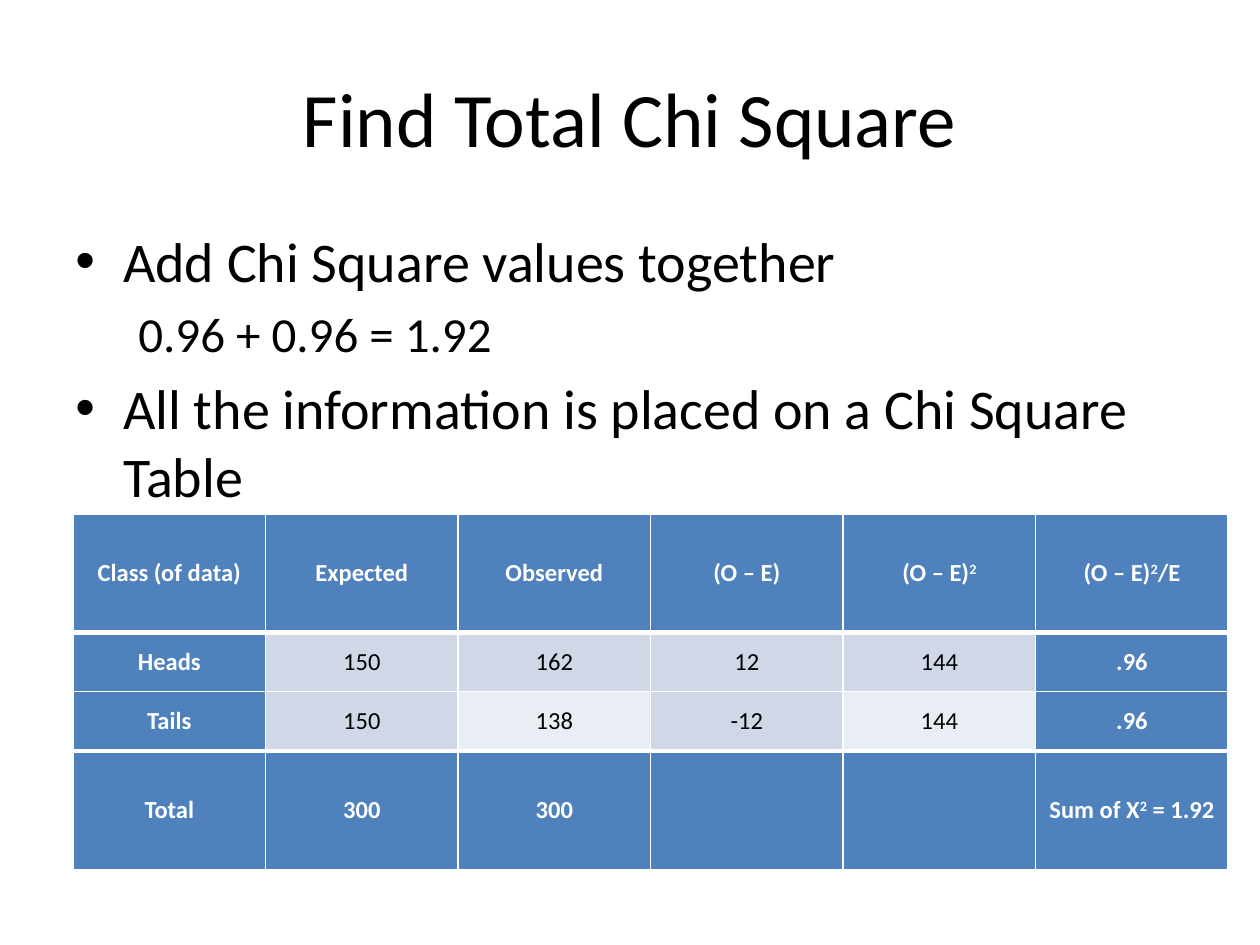
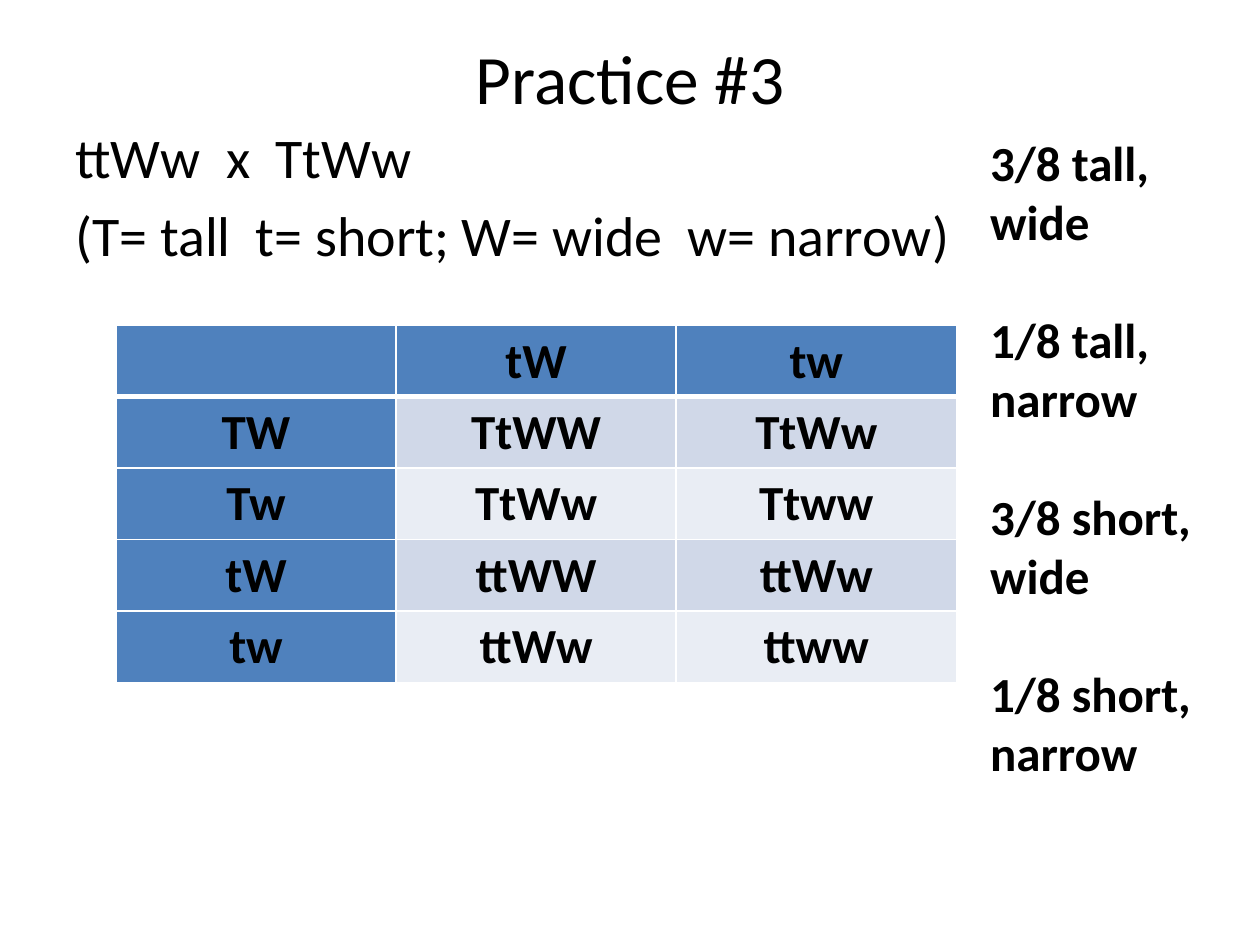
from pptx import Presentation
from pptx.dml.color import RGBColor
from pptx.enum.text import MSO_ANCHOR, PP_ALIGN
from pptx.util import Inches, Pt
from lxml.etree import SubElement
from pptx.oxml.ns import qn

HUES = {"ink": "000000", "paper": "FFFFFF", "head": "4F81BD",
        "dark": "D0D8E8", "light": "E9EDF4"}
FACE = "Calibri"

CHI = [["Class (of data)", "Expected", "Observed", "(O – E)", "(O – E)^2", "(O – E)^2/E"],
       ["Heads", "150", "162", "12", "144", ".96"],
       ["Tails", "150", "138", "-12", "144", ".96"],
       ["Total", "300", "300", "", "", "Sum of X^2 = 1.92"]]
CROSS = [["", "tW", "tw"],
         ["TW", "TtWW", "TtWw"],
         ["Tw", "TtWw", "Ttww"],
         ["tW", "ttWW", "ttWw"],
         ["tw", "ttWw", "ttww"]]
RATIOS = ["3/8 tall, wide", "1/8 tall, narrow", "3/8 short, wide", "1/8 short, narrow"]


def style(para, size, hue="ink", bold=False):
    for run in para.runs:
        font = run.font
        font.name, font.size, font.bold = FACE, Pt(size), bold
        font.color.rgb = RGBColor.from_string(HUES[hue])


def title(deck, text, box, size):
    """Add a title-only slide and set its title."""
    slide = deck.slides.add_slide(deck.slide_layouts[5])
    head = slide.shapes.title
    head.left, head.top, head.width, head.height = map(Inches, box)
    frame = head.text_frame
    frame.text = text
    frame.vertical_anchor = MSO_ANCHOR.MIDDLE
    frame.paragraphs[0].alignment = PP_ALIGN.CENTER
    style(frame.paragraphs[0], size)
    return slide


def indent(para, left, bullet):
    props = para._p.get_or_add_pPr()
    props.set("marL", str(Inches(left)))
    if bullet:
        props.set("indent", str(-Inches(left)))
        SubElement(props, qn("a:buFont"), typeface="Arial")
        SubElement(props, qn("a:buChar"), char="•")


def body(slide, box, items, bold=False, before=0.2, after=0):
    """Write items of (text, size, indent, bullet) as paragraphs."""
    frame = slide.shapes.add_textbox(*map(Inches, box)).text_frame
    frame.word_wrap = True
    frame.text = "\n".join(item[0] for item in items)
    for para, (_, size, left, bullet) in zip(frame.paragraphs, items):
        para.space_before = Pt(size * before)
        para.space_after = Pt(after)
        indent(para, left, bullet)
        style(para, size, bold=bold)


def edge(cell, side, width):
    line = SubElement(cell._tc.get_or_add_tcPr(), qn("a:ln" + side), w=str(Pt(width)))
    fill = SubElement(line, qn("a:solidFill"))
    SubElement(fill, qn("a:srgbClr"), val=HUES["paper"])


def write(cell, text, size, hue, bold):
    """Centre text in a cell; ^2 stands for a raised 2."""
    para = cell.text_frame.paragraphs[0]
    para.alignment = PP_ALIGN.CENTER
    for n, part in enumerate(text.split("^2")):
        if n:
            power = para.add_run()
            power.text = "2"
            power._r.get_or_add_rPr().set("baseline", "30000")
        if part:
            para.add_run().text = part
    style(para, size, hue, bold)


def grid(slide, box, rows, heights, size, heads, heavy, strips=False, tight=False):
    """Draw a banded table; heads(r, c) tells header cells, heavy the thick rules."""
    table = slide.shapes.add_table(len(rows), len(rows[0]), *map(Inches, box)).table
    for col in table.columns:
        col.width = Inches(box[2] / len(rows[0]))
    for r, (row, high) in enumerate(zip(rows, heights)):
        table.rows[r].height = Inches(high)
        for c, text in enumerate(row):
            cell = table.cell(r, c)
            top, low = (3 if n in heavy else 1 for n in (r, r + 1))
            for side, width in zip("LRTB", (1, 1, top, low)):
                edge(cell, side, width)
            main = heads(r, c)
            band = "dark" if r % 2 or strips and c % 2 else "light"
            cell.fill.solid()
            cell.fill.fore_color.rgb = RGBColor.from_string(HUES["head" if main else band])
            if tight:
                cell.margin_left = cell.margin_right = Inches(0.07)
                cell.margin_top = cell.margin_bottom = 0
                cell.vertical_anchor = MSO_ANCHOR.MIDDLE
            # the tight table sets white on its header cells only
            white = tight and main
            write(cell, text, size, "paper" if white else "ink", white or not tight)


def total(deck):
    slide = title(deck, "Find Total Chi Square", (0.5, 0.3, 9, 1.25), 44)
    body(slide, (0.5, 1.75, 9, 4.95), [
        ("Add Chi Square values together", 32, 0.38, True),
        ("0.96 + 0.96 = 1.92", 28, 0.5, False),
        ("All the information is placed on a Chi Square Table", 32, 0.38, True)])
    grid(slide, (0.58, 4.08, 9.17, 2.83), CHI, (0.94, 0.47, 0.47, 0.94), 14,
         lambda r, c: r in (0, 3) or c in (0, 5), {1, 3}, strips=True, tight=True)


def practice(deck):
    slide = title(deck, "Practice #3", (0.5, 0.3, 9, 0.62), 39.6)
    body(slide, (0.5, 0.92, 9, 5.78), [
        ("ttWw  x  TtWw", 32, 0, False),
        ("(T= tall  t= short; W= wide  w= narrow)", 32, 0, False)])
    grid(slide, (0.92, 2.58, 6.67, 2.83), CROSS, [2.83 / 5] * 5, 28,
         lambda r, c: r == 0 or c == 0, {1})
    # offspring ratios
    body(slide, (7.76, 1, 2.25, 5.28), [(text, 28, 0, False) for text in RATIOS],
         bold=True, before=0, after=34)


def main():
    deck = Presentation()
    deck.slide_width, deck.slide_height = Inches(10), Inches(7.5)
    total(deck)
    practice(deck)
    deck.save("out.pptx")


if __name__ == "__main__":
    main()
